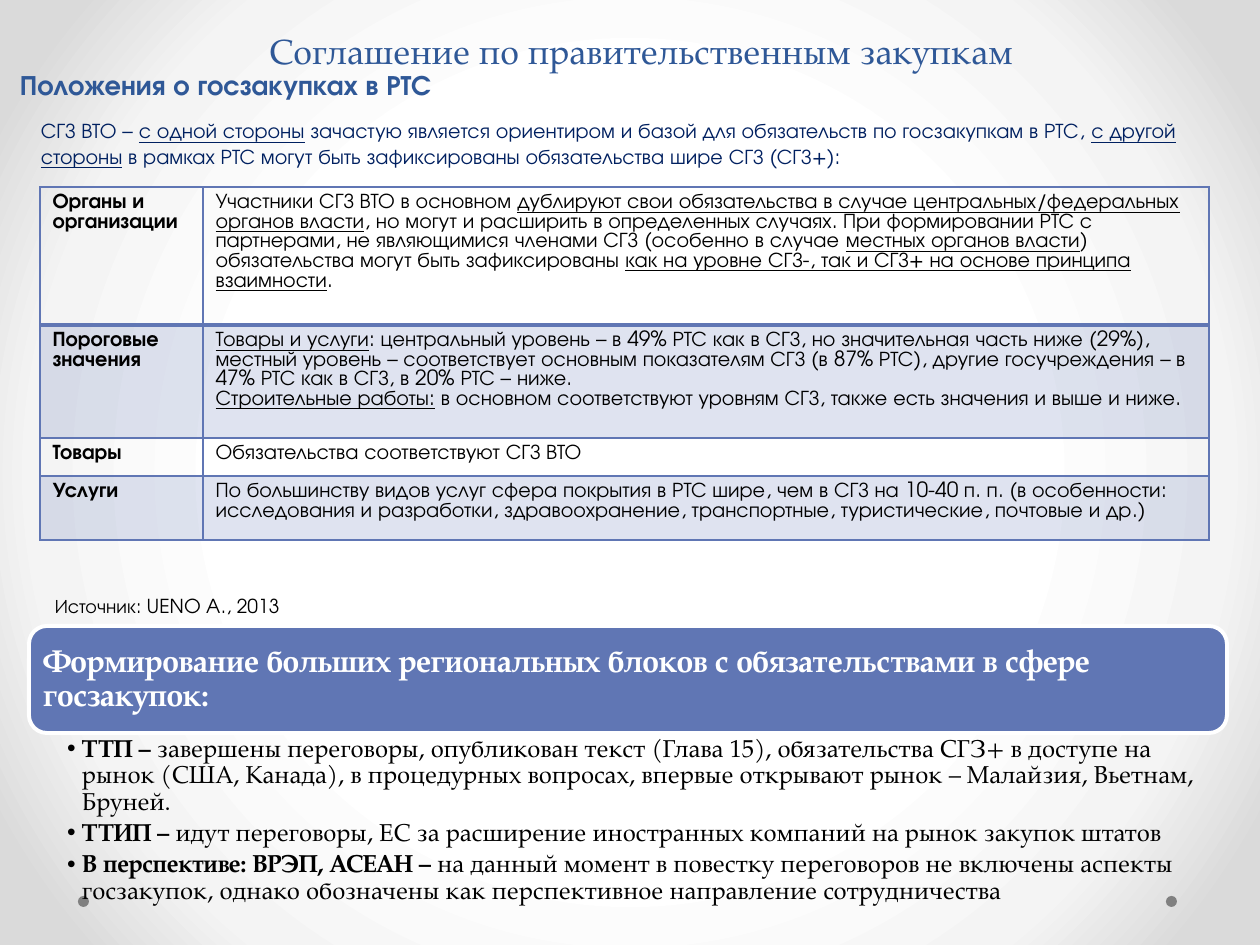
from dataclasses import dataclass

from pptx import Presentation
from pptx.dml.color import RGBColor
from pptx.enum.shapes import MSO_SHAPE
from pptx.enum.text import MSO_ANCHOR, MSO_AUTO_SIZE, PP_ALIGN
from pptx.oxml import parse_xml
from pptx.oxml.ns import nsdecls, qn
from pptx.util import Emu, Pt

TOP, MIDDLE, BOTTOM = MSO_ANCHOR.TOP, MSO_ANCHOR.MIDDLE, MSO_ANCHOR.BOTTOM
LEFT, CENTER = PP_ALIGN.LEFT, PP_ALIGN.CENTER
ROUNDED, OVAL = MSO_SHAPE.ROUNDED_RECTANGLE, MSO_SHAPE.OVAL
EMU_PER_PX = 914400 / 126


@dataclass(frozen=True)
class Theme:
    sans: str = "TeX Gyre Adventor"
    serif: str = "TeX Gyre Pagella"
    blue: str = "2F5897"
    navy: str = "002060"
    accent: str = "6076B4"
    black: str = "000000"
    white: str = "FFFFFF"
    grey: str = "808080"
    heading: int = 20
    banner: int = 18
    title: int = 16
    bullet: int = 14
    body: int = 12
    source: int = 11
    backdrop: tuple = ((50, "FFFFFF"), (76, "F4F4F4"), (92, "DADADA"))


THEME = Theme()

# Text between bars is emphasised
INTRO = ("СГЗ ВТО – |с одной стороны| зачастую является ориентиром и базой для обязательств "
         "по госзакупкам в РТС, |с другой стороны| в рамках РТС могут быть зафиксированы "
         "обязательства шире СГЗ (СГЗ+):")
ROW_HEIGHTS = (138, 113, 38, 64)
COLUMN_WIDTHS = (163, 1006)
PROVISIONS = (
    ("Органы и организации", [
        "Участники СГЗ ВТО в основном |дублируют свои обязательства в случае "
        "центральных/федеральных органов власти|, но могут и расширить в определенных случаях. "
        "При формировании РТС с партнерами, не являющимися членами СГЗ (особенно в случае "
        "|местных органов власти|) обязательства могут быть зафиксированы |как на уровне СГЗ-, "
        "так и СГЗ+ на основе принципа взаимности|."]),
    ("Пороговые значения", [
        "|Товары и услуги|: центральный уровень – в 49% РТС как в СГЗ, но значительная часть "
        "ниже (29%), местный уровень – соответствует основным показателям СГЗ (в 87% РТС), "
        "другие госучреждения – в 47% РТС как в СГЗ, в 20% РТС – ниже.",
        "|Строительные работы:| в основном соответствуют уровням СГЗ, также есть значения "
        "и выше и ниже."]),
    ("Товары", ["Обязательства соответствуют СГЗ ВТО"]),
    ("Услуги", [
        "По большинству видов услуг сфера покрытия в РТС шире, чем в СГЗ на 10-40 п. п. "
        "(в особенности: исследования и разработки, здравоохранение, транспортные, "
        "туристические, почтовые и др.)"]),
)
BLOCS = [
    "|ТТП – |завершены переговоры, опубликован текст (Глава 15), обязательства СГЗ+ в доступе "
    "на рынок (США, Канада), в процедурных вопросах, впервые открывают рынок – Малайзия, "
    "Вьетнам, Бруней.",
    "|ТТИП – |идут переговоры, ЕС за расширение иностранных компаний на рынок закупок штатов",
    "|В перспективе: ВРЭП, АСЕАН – |на данный момент в повестку переговоров не включены "
    "аспекты госзакупок, однако обозначены как перспективное направление сотрудничества",
]


def px(length):
    return Emu(round(length * EMU_PER_PX))


def apply(target, formats):
    for name, value in formats.items():
        setattr(target, name, value)


def place(shape, box):
    apply(shape, dict(zip(("left", "top", "width", "height"), map(px, box))))


def write(frame, texts, font, size, color, bold=False, emphasis="underline", **paragraph_formats):
    for index, text in enumerate(texts):
        paragraph = frame.add_paragraph() if index else frame.paragraphs[0]
        apply(paragraph, paragraph_formats)
        for position, part in enumerate(text.split("|")):
            if part:
                run = paragraph.add_run()
                run.text = part
                apply(run.font, {"name": font, "size": Pt(size), "bold": bold})
                run.font.color.rgb = RGBColor.from_string(color)
                if position % 2:
                    setattr(run.font, emphasis, True)


def set_frame(frame, anchor=TOP, margins=(13, 6, 13, 6)):
    apply(frame, {"word_wrap": True, "auto_size": MSO_AUTO_SIZE.NONE, "vertical_anchor": anchor})
    sides = ("margin_left", "margin_top", "margin_right", "margin_bottom")
    apply(frame, dict(zip(sides, map(px, margins))))


def paint(shape, color):
    shape.shadow.inherit = False
    shape.fill.solid()
    shape.fill.fore_color.rgb = RGBColor.from_string(color)


def add_backdrop(slide):
    stops = "".join(f'<a:gs pos="{position * 1000}"><a:srgbClr val="{color}"/></a:gs>'
                    for position, color in THEME.backdrop)
    background = parse_xml(
        f'<p:bg {nsdecls("p", "a")}><p:bgPr><a:gradFill rotWithShape="1"><a:gsLst>{stops}</a:gsLst>'
        '<a:path path="circle"><a:fillToRect l="50000" t="50000" r="50000" b="50000"/></a:path>'
        '</a:gradFill><a:effectLst/></p:bgPr></p:bg>')
    slide._element.cSld.insert(0, background)
    # Corner dots sit behind the text
    for left in (78, 1166):
        dot = slide.shapes.add_shape(OVAL, *map(px, (left, 896, 11, 11)))
        paint(dot, THEME.grey)
        dot.line.fill.background()
        slide.shapes._spTree.insert(2, dot._element)


def add_title(slide, box):
    title = slide.shapes.title
    place(title, box)
    set_frame(title.text_frame, BOTTOM)
    write(title.text_frame, ["Положения о госзакупках в РТС"], THEME.sans, THEME.title,
          THEME.blue, bold=True, alignment=LEFT)


def add_text(slide, box, text, font, size, color, anchor=TOP, **paragraph_formats):
    frame = slide.shapes.add_textbox(*map(px, box)).text_frame
    set_frame(frame, anchor)
    write(frame, [text], font, size, color, **paragraph_formats)


def style_cell(cell, shaded, bottom_width):
    if shaded:
        cell.fill.solid()
        cell.fill.fore_color.rgb = RGBColor.from_string(THEME.accent)
        color = cell._tc.tcPr.find(".//" + qn("a:srgbClr"))
        color.append(parse_xml(f'<a:alpha {nsdecls("a")} val="20000"/>'))
    else:
        cell.fill.background()
    widths = {"lnL": 1, "lnR": 1, "lnT": 1, "lnB": bottom_width}
    for index, (side, width) in enumerate(widths.items()):
        cell._tc.tcPr.insert(index, parse_xml(
            f'<a:{side} {nsdecls("a")} w="{Pt(width)}"><a:solidFill>'
            f'<a:srgbClr val="{THEME.accent}"/></a:solidFill></a:{side}>'))


def add_provisions(slide, left, top):
    box = (left, top, sum(COLUMN_WIDTHS), sum(ROW_HEIGHTS))
    table = slide.shapes.add_table(len(PROVISIONS), 2, *map(px, box)).table
    apply(table, {"first_row": False, "horz_banding": False})
    for column, width in zip(table.columns, COLUMN_WIDTHS):
        column.width = px(width)
    for index, (label, details) in enumerate(PROVISIONS):
        table.rows[index].height = px(ROW_HEIGHTS[index])
        for column, texts in enumerate(([label], details)):
            cell = table.cell(index, column)
            write(cell.text_frame, texts, THEME.sans, THEME.body, THEME.black,
                  bold=column == 0)
            style_cell(cell, index % 2 == 1, 2 if index == 0 else 1)


def add_blocs(slide, left, top, width):
    # Banner
    banner_height = 107
    banner = slide.shapes.add_shape(ROUNDED, *map(px, (left, top, width, banner_height)))
    paint(banner, THEME.accent)
    banner.line.color.rgb = RGBColor.from_string(THEME.white)
    banner.line.width = Pt(2.25)
    set_frame(banner.text_frame, MIDDLE, (9, 9, 9, 9))
    write(banner.text_frame,
          ["Формирование больших региональных блоков с обязательствами в сфере госзакупок:"],
          THEME.serif, THEME.banner, THEME.white, bold=True, alignment=LEFT, line_spacing=0.9)
    # Bullets
    body = slide.placeholders[1]
    place(body, (left, top + banner_height, width, 200))
    set_frame(body.text_frame, TOP, (38, 3, 18, 4))
    write(body.text_frame, BLOCS, THEME.serif, THEME.bullet, THEME.black, emphasis="bold",
          line_spacing=0.9, space_before=Pt(0), space_after=Pt(2.8))
    for paragraph in body.text_frame.paragraphs:
        properties = paragraph._p.get_or_add_pPr()
        properties.set("marL", str(px(15)))
        properties.set("indent", str(-px(15)))
        properties.append(parse_xml(f'<a:buChar {nsdecls("a")} char="•"/>'))


def main():
    presentation = Presentation()
    presentation.slide_width, presentation.slide_height = px(1260), px(945)
    slide = presentation.slides.add_slide(presentation.slide_layouts[1])
    add_backdrop(slide)
    add_title(slide, (7, 71, 1131, 36))
    add_text(slide, (28, 112, 1198, 63), INTRO, THEME.sans, THEME.body, THEME.navy)
    add_blocs(slide, 29, 626, 1198)
    add_provisions(slide, 40, 187)
    add_text(slide, (42, 588, 262, 37), "Источник: UENO A., 2013",
             THEME.sans, THEME.source, THEME.black)
    add_text(slide, (40, 0, 1202, 78), "Соглашение по правительственным закупкам", THEME.serif,
             THEME.heading, THEME.blue, BOTTOM, alignment=CENTER, line_spacing=Pt(58))
    presentation.save("out.pptx")


if __name__ == "__main__":
    main()
